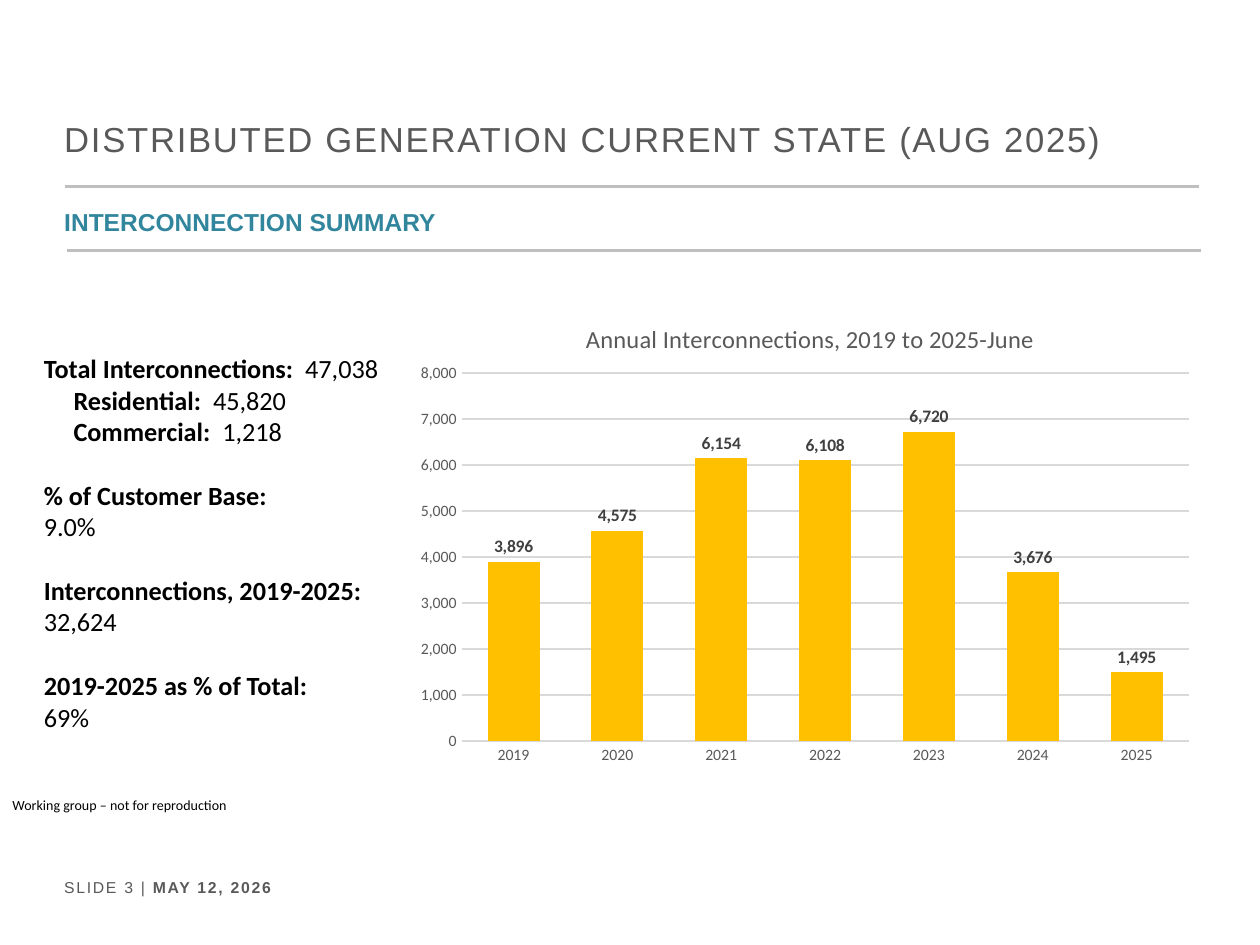
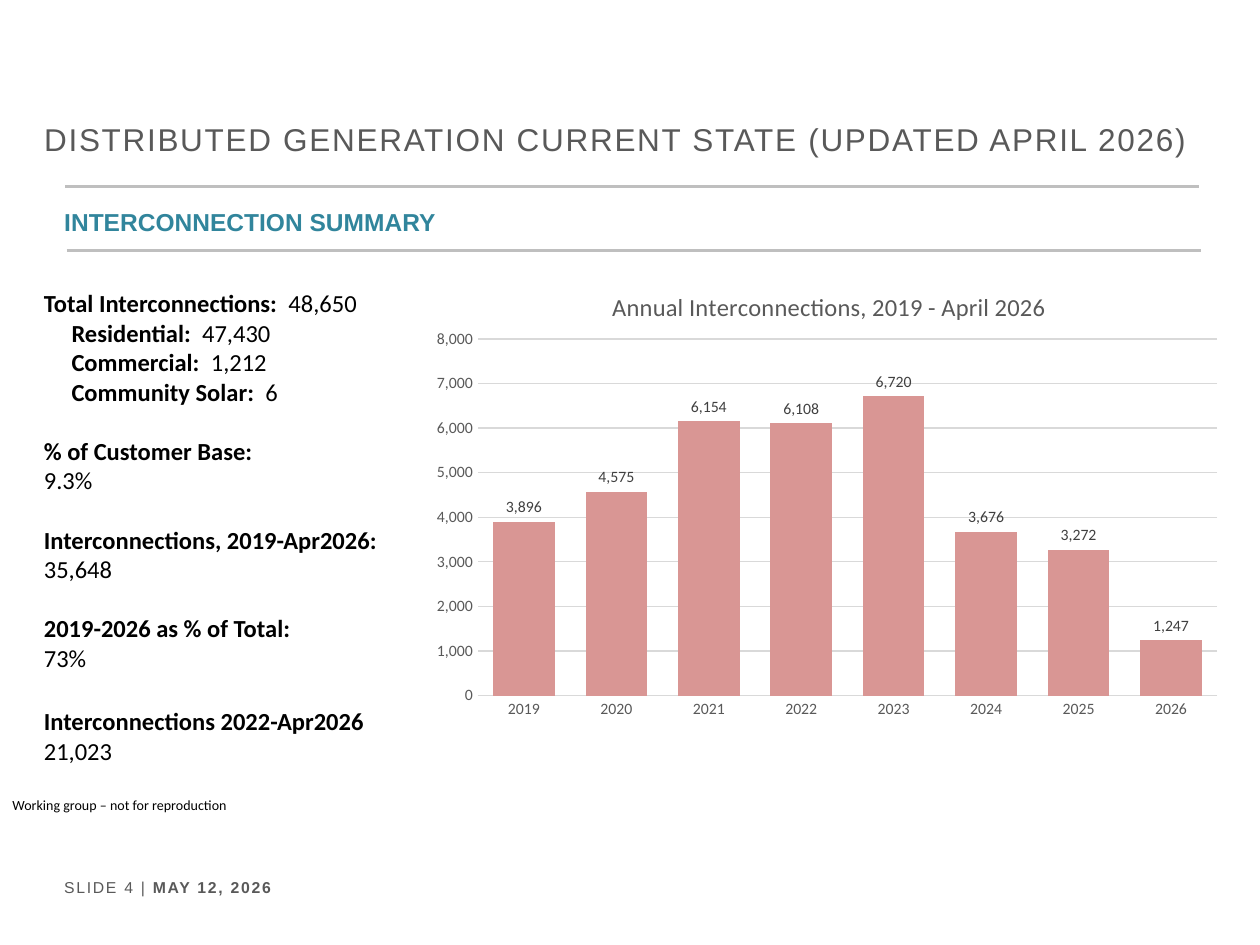
from dataclasses import dataclass
from typing import NamedTuple

from lxml import etree
from pptx import Presentation
from pptx.chart.data import CategoryChartData
from pptx.dml.color import RGBColor
from pptx.enum.chart import XL_CHART_TYPE, XL_LABEL_POSITION, XL_TICK_MARK
from pptx.enum.shapes import MSO_CONNECTOR
from pptx.enum.text import MSO_ANCHOR, MSO_AUTO_SIZE, PP_ALIGN
from pptx.oxml.ns import qn
from pptx.util import Inches, Pt

COLUMN_CLUSTERED = XL_CHART_TYPE.COLUMN_CLUSTERED
OUTSIDE_END = XL_LABEL_POSITION.OUTSIDE_END
NO_TICK = XL_TICK_MARK.NONE
STRAIGHT = MSO_CONNECTOR.STRAIGHT
MIDDLE = MSO_ANCHOR.MIDDLE
FIXED_SIZE = MSO_AUTO_SIZE.NONE
LEFT = PP_ALIGN.LEFT

COLORS = {
    "grey": "595959",
    "rule": "BFBFBF",
    "teal": "31859C",
    "black": "000000",
    "grid": "D9D9D9",
    "label": "404040",
    "gold": "FFC000",
    "rose": "D99694",
}
HEADING_FONT, BODY_FONT = "Arial", "Calibri"
SLIDE_WIDTH, SLIDE_HEIGHT = Inches(10), Inches(7.5)
COLUMN, ROW = SLIDE_WIDTH / 100, SLIDE_HEIGHT / 75
LINE_HEIGHT = 1.22
INDENT_RATIO = 1.13


class Frame(NamedTuple):
    left: float
    top: float
    width: float
    height: float

    def lengths(self) -> tuple[int, int, int, int]:
        return (round(self.left * COLUMN), round(self.top * ROW),
                round(self.width * COLUMN), round(self.height * ROW))


class Span(NamedTuple):
    text: str
    bold: bool = False


class Stat(NamedTuple):
    label: str
    value: str
    gap: float = 0


@dataclass
class Summary:
    number: int
    title: str
    title_frame: Frame
    title_size: float
    stats_frame: Frame
    stats_size: float
    totals: list[Stat]
    stats: list[Stat]
    chart_frame: Frame
    chart_title: str
    chart_title_left: float
    counts: dict[str, int]
    bar_color: str
    gap_width: int
    label_size: float
    label_bold: bool


RULES = [Frame(5.2, 14.8, 90, 0), Frame(5.3, 19.9, 90, 0)]
SUBTITLE_FRAME = Frame(4.1, 15, 91, 4.7)
NOTICE_FRAME = Frame(0, 62.7, 19.2, 2.4)
FOOTER_FRAME = Frame(4.1, 69.2, 26.8, 2.5)
PLOT_LAYOUT = {"x": 0.07, "y": 0.165, "w": 0.91, "h": 0.765}
TITLE_TOP = 0.05

HISTORY = {"2019": 3896, "2020": 4575, "2021": 6154, "2022": 6108, "2023": 6720, "2024": 3676}

SUMMARIES = [
    Summary(
        number=3,
        title="DISTRIBUTED GENERATION CURRENT STATE (AUG 2025)",
        title_frame=Frame(4.1, 8.1, 91.1, 5.8),
        title_size=19.8,
        stats_frame=Frame(2.5, 27.5, 29.7, 34),
        stats_size=15,
        totals=[
            Stat("Total Interconnections:", "47,038"),
            Stat("Residential:", "45,820"),
            Stat("Commercial:", "1,218"),
        ],
        stats=[
            Stat("% of Customer Base:", "9.0%", 15),
            Stat("Interconnections, 2019-2025:", "32,624", 15),
            Stat("2019-2025 as % of Total:", "69%", 15),
        ],
        chart_frame=Frame(32.2, 23.3, 63.4, 38.2),
        chart_title="Annual Interconnections, 2019 to 2025-June",
        chart_title_left=0.22,
        counts=HISTORY | {"2025": 1495},
        bar_color="gold",
        gap_width=100,
        label_size=10,
        label_bold=True,
    ),
    Summary(
        number=4,
        title="DISTRIBUTED GENERATION CURRENT STATE (UPDATED APRIL 2026)",
        title_frame=Frame(2.5, 8.1, 93.1, 5.8),
        title_size=18,
        stats_frame=Frame(2.5, 22.4, 31.4, 39),
        stats_size=14,
        totals=[
            Stat("Total Interconnections:", "48,650"),
            Stat("Residential:", "47,430"),
            Stat("Commercial:", "1,212"),
            Stat("Community Solar:", "6"),
        ],
        stats=[
            Stat("% of Customer Base:", "9.3%", 14),
            Stat("Interconnections, 2019-Apr2026:", "35,648", 14),
            Stat("2019-2026 as % of Total:", "73%", 14),
            Stat("Interconnections 2022-Apr2026", "21,023", 16),
        ],
        chart_frame=Frame(33.4, 20.8, 64.5, 37),
        chart_title="Annual Interconnections, 2019 - April 2026",
        chart_title_left=0.23,
        counts=HISTORY | {"2025": 3272, "2026": 1247},
        bar_color="rose",
        gap_width=50,
        label_size=9,
        label_bold=False,
    ),
]


def color(name: str) -> RGBColor:
    return RGBColor.from_string(COLORS[name])


def style_font(font, name: str, size: float, color_name: str, bold: bool = False) -> None:
    font.name = name
    font.size = Pt(size)
    font.bold = bold
    font.color.rgb = color(color_name)


def write_spans(para, spans: list[Span], font: str, size: float, color_name: str,
                spacing: float = 0) -> None:
    for span in spans:
        run = para.add_run()
        run.text = span.text
        style_font(run.font, font, size, color_name, span.bold)
        if spacing:
            run._r.get_or_add_rPr().set("spc", str(round(spacing * 100)))


def place(box, frame: Frame) -> None:
    box.left, box.top, box.width, box.height = frame.lengths()
    box.text_frame.word_wrap = True
    box.text_frame.auto_size = FIXED_SIZE
    box.text_frame.vertical_anchor = MIDDLE


def add_text_box(page, frame: Frame):
    box = page.shapes.add_textbox(*frame.lengths())
    box.text_frame.word_wrap = True
    return box.text_frame


def add_rule(page, frame: Frame) -> None:
    left, top, width, height = frame.lengths()
    rule = page.shapes.add_connector(STRAIGHT, left, top, left + width, top + height)
    rule.line.color.rgb = color("rule")
    rule.line.width = Pt(1.5)
    etree.SubElement(rule._element.spPr, qn("a:effectLst"))


def add_headings(page, summary: Summary) -> None:
    title = page.shapes.title
    place(title, summary.title_frame)
    para = title.text_frame.paragraphs[0]
    para.alignment = LEFT
    write_spans(para, [Span(summary.title)], HEADING_FONT, summary.title_size, "grey", 1)

    subtitle = page.placeholders[1]
    place(subtitle, SUBTITLE_FRAME)
    para = subtitle.text_frame.paragraphs[0]
    para.line_spacing = 1.2
    para.space_before = Pt(0)
    properties = para._p.get_or_add_pPr()
    properties.set("marL", "0")
    properties.set("indent", "0")
    etree.SubElement(properties, qn("a:buNone"))
    write_spans(para, [Span("INTERCONNECTION SUMMARY", True)], HEADING_FONT, 14, "teal")


def add_notes_and_footer(page, number: int) -> None:
    notice = add_text_box(page, NOTICE_FRAME).paragraphs[0]
    write_spans(notice, [Span("Working group – not for reproduction")], BODY_FONT, 8, "black")
    footer = add_text_box(page, FOOTER_FRAME).paragraphs[0]
    spans = [Span(f"SLIDE {number} | "), Span("MAY 12, 2026", True)]
    write_spans(footer, spans, HEADING_FONT, 9, "grey", 1)


def add_stats(page, summary: Summary) -> None:
    text_frame = add_text_box(page, summary.stats_frame)
    size = summary.stats_size
    for index, total in enumerate(summary.totals):
        para = text_frame.add_paragraph() if index else text_frame.paragraphs[0]
        if index:
            indent = Pt(size * INDENT_RATIO)
            para._p.get_or_add_pPr().set("marL", str(int(indent)))
        spans = [Span(f"{total.label}  ", True), Span(total.value)]
        write_spans(para, spans, BODY_FONT, size, "black")
    for stat in summary.stats:
        para = text_frame.add_paragraph()
        para.space_before = Pt(stat.gap * LINE_HEIGHT)
        write_spans(para, [Span(stat.label, True)], BODY_FONT, size, "black")
        write_spans(text_frame.add_paragraph(), [Span(stat.value)], BODY_FONT, size, "black")


def set_layout(parent, position: int, shares: dict[str, float]) -> None:
    for old_layout in parent.findall(qn("c:layout")):
        parent.remove(old_layout)
    layout = etree.Element(qn("c:layout"))
    manual = etree.SubElement(layout, qn("c:manualLayout"))
    if "w" in shares:
        etree.SubElement(manual, qn("c:layoutTarget")).set("val", "inner")
    for side in ("x", "y"):
        etree.SubElement(manual, qn(f"c:{side}Mode")).set("val", "edge")
    for side, share in shares.items():
        etree.SubElement(manual, qn(f"c:{side}")).set("val", str(share))
    parent.insert(position, layout)


def add_interconnection_chart(page, summary: Summary) -> None:
    data = CategoryChartData(number_format="#,##0")
    data.categories = list(summary.counts)
    data.add_series("Series 1", list(summary.counts.values()))
    chart = page.shapes.add_chart(COLUMN_CLUSTERED, *summary.chart_frame.lengths(), data).chart
    style_font(chart.font, BODY_FONT, 10, "black")
    chart.has_legend = False

    para = chart.chart_title.text_frame.paragraphs[0]
    write_spans(para, [Span(summary.chart_title)], BODY_FONT, 14, "grey")
    set_layout(chart.chart_title._element, 1, {"x": summary.chart_title_left, "y": TITLE_TOP})
    set_layout(chart._chartSpace.chart.plotArea, 0, PLOT_LAYOUT)

    for axis in (chart.category_axis, chart.value_axis):
        axis.major_tick_mark = axis.minor_tick_mark = NO_TICK
        style_font(axis.tick_labels.font, BODY_FONT, 9, "grey")
    values = chart.value_axis
    values.minimum_scale, values.maximum_scale, values.major_unit = 0, 8000, 1000
    values.tick_labels.number_format = "#,##0"
    values.tick_labels.number_format_is_linked = False
    values.format.line.fill.background()
    for line in (chart.category_axis.format.line, values.major_gridlines.format.line):
        line.color.rgb = color("grid")
        line.width = Pt(0.75)

    plot = chart.plots[0]
    plot.gap_width, plot.overlap = summary.gap_width, -27
    plot.vary_by_categories = False
    bars = plot.series[0]
    bars.format.fill.solid()
    bars.format.fill.fore_color.rgb = color(summary.bar_color)
    labels = bars.data_labels
    labels.show_value = True
    labels.position = OUTSIDE_END
    style_font(labels.font, BODY_FONT, summary.label_size, "label", summary.label_bold)


def build_page(deck, summary: Summary) -> None:
    page = deck.slides.add_slide(deck.slide_layouts[1])
    for rule in RULES:
        add_rule(page, rule)
    add_headings(page, summary)
    add_notes_and_footer(page, summary.number)
    add_stats(page, summary)
    add_interconnection_chart(page, summary)


def main() -> None:
    deck = Presentation()
    deck.slide_width, deck.slide_height = SLIDE_WIDTH, SLIDE_HEIGHT
    for summary in SUMMARIES:
        build_page(deck, summary)
    deck.save("out.pptx")


if __name__ == "__main__":
    main()
